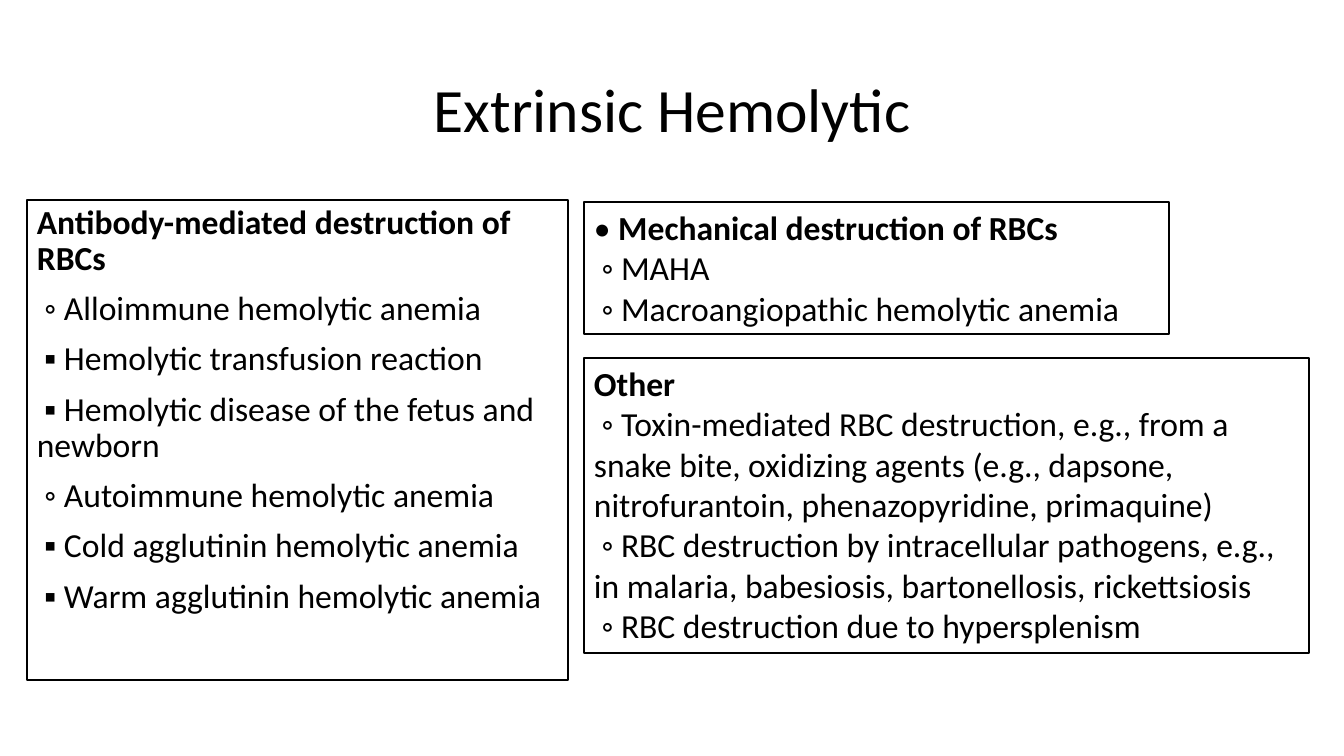
import pptx
import pptx.dml.color
import pptx.enum.shapes
import pptx.enum.text
import pptx.util

COLOURS = {"ink": "000000", "paper": "FFFFFF"}
PX = 914400 / 100.8

ANTIBODY = [
    " ◦ Alloimmune hemolytic anemia",
    " ▪ Hemolytic transfusion reaction",
    " ▪ Hemolytic disease of the fetus and newborn",
    " ◦ Autoimmune hemolytic anemia",
    " ▪ Cold agglutinin hemolytic anemia",
    " ▪ Warm agglutinin hemolytic anemia",
]
MECHANICAL = [
    " ◦ MAHA",
    " ◦ Macroangiopathic hemolytic anemia",
]
OTHER = [
    " ◦ Toxin-mediated RBC destruction, e.g., from a snake bite, oxidizing agents "
    "(e.g., dapsone, nitrofurantoin, phenazopyridine, primaquine)",
    " ◦ RBC destruction by intracellular pathogens, e.g., in malaria, babesiosis, "
    "bartonellosis, rickettsiosis",
    " ◦ RBC destruction due to hypersplenism",
]


def emu(*lengths):
    return [pptx.util.Emu(round(length * PX)) for length in lengths]


def colour(name):
    return pptx.dml.color.RGBColor.from_string(COLOURS[name])


class SlideWriter:
    font_name = "Calibri"
    title_size = 44
    body_size = 24

    def __init__(self, page):
        self.page = page

    def style(self, para, size, align):
        para.alignment = align
        para.font.name = self.font_name
        para.font.size = pptx.util.Pt(size)
        para.font.color.rgb = colour("ink")

    def title(self, text, left, top, width, height):
        holder = self.page.shapes.title
        holder.left, holder.top, holder.width, holder.height = emu(left, top, width, height)
        frame = holder.text_frame
        frame.text = text
        frame.vertical_anchor = pptx.enum.text.MSO_ANCHOR.MIDDLE
        para = frame.paragraphs[0]
        para.line_spacing = 0.9
        self.style(para, self.title_size, pptx.enum.text.PP_ALIGN.CENTER)

    def panel(self, heading, items, left, top, width, height, marker="", spaced=False):
        box = self.page.shapes.add_shape(
            pptx.enum.shapes.MSO_SHAPE.RECTANGLE, *emu(left, top, width, height))
        box.shadow.inherit = False
        box.fill.solid()
        box.fill.fore_color.rgb = colour("paper")
        box.line.color.rgb = colour("ink")
        box.line.width = pptx.util.Pt(1)
        frame = box.text_frame
        frame.word_wrap = True
        frame.vertical_anchor = pptx.enum.text.MSO_ANCHOR.TOP
        if not spaced:
            frame.auto_size = pptx.enum.text.MSO_AUTO_SIZE.SHAPE_TO_FIT_TEXT
        para = frame.paragraphs[0]
        if marker:
            para.add_run().text = marker
        span = para.add_run()
        span.text = heading
        span.font.bold = True
        for item in items:
            frame.add_paragraph().text = item
        for index, para in enumerate(frame.paragraphs):
            self.style(para, self.body_size, pptx.enum.text.PP_ALIGN.LEFT)
            if spaced:
                para.line_spacing = 0.9
                if index:
                    para.space_before = pptx.util.Pt(10)


def main():
    deck = pptx.Presentation()
    deck.slide_width, deck.slide_height = emu(1344, 756)
    writer = SlideWriter(deck.slides.add_slide(deck.slide_layouts.get_by_name("Title Only")))
    writer.title("Extrinsic Hemolytic", 93, 40, 1159, 146)
    writer.panel("Antibody-mediated destruction of RBCs", ANTIBODY,
                 27, 200, 541, 480, spaced=True)
    writer.panel("Mechanical destruction of RBCs", MECHANICAL,
                 584, 202, 585, 132, marker="• ")
    writer.panel("Other", OTHER, 584, 358, 725, 295)
    deck.save("out.pptx")


if __name__ == "__main__":
    main()
